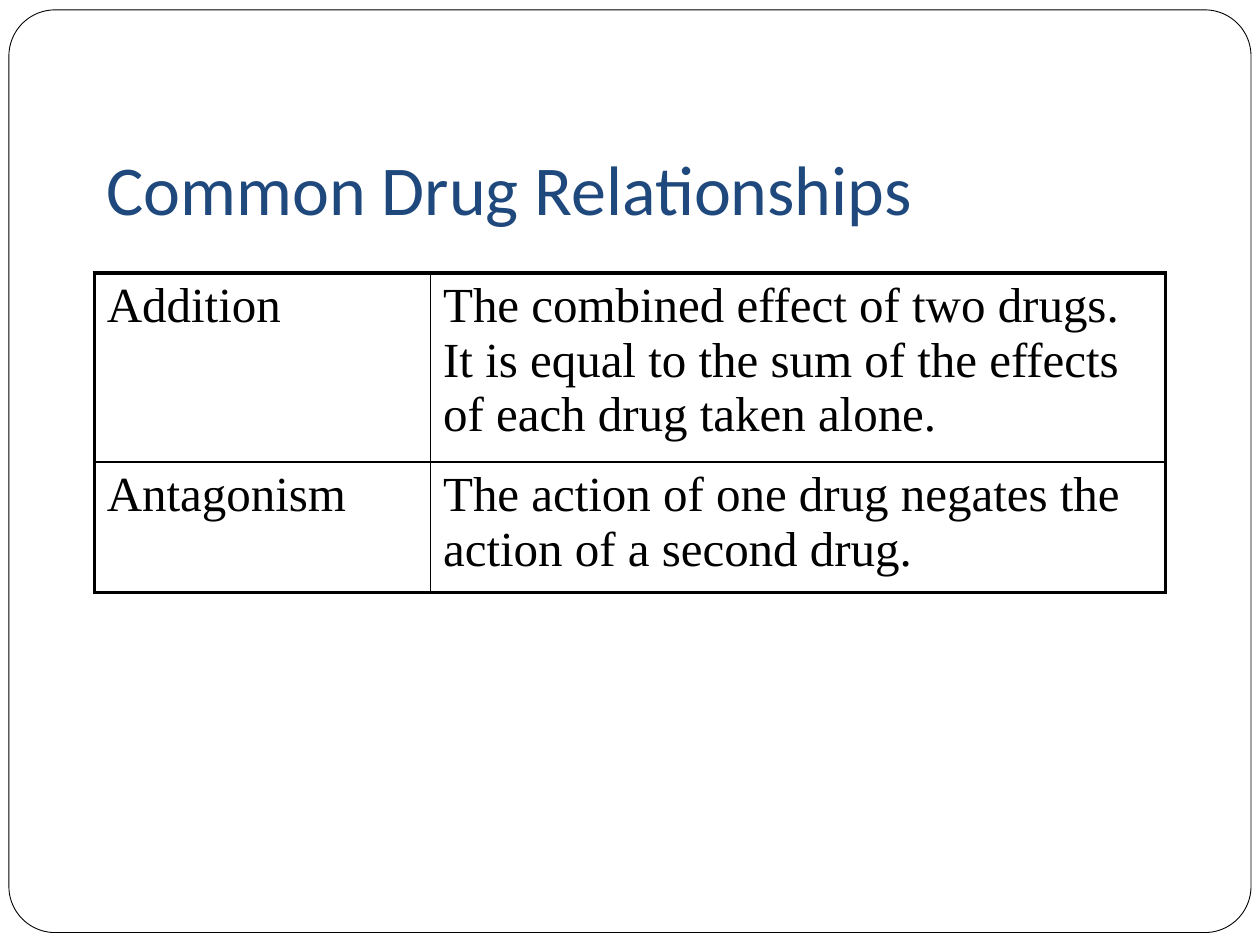
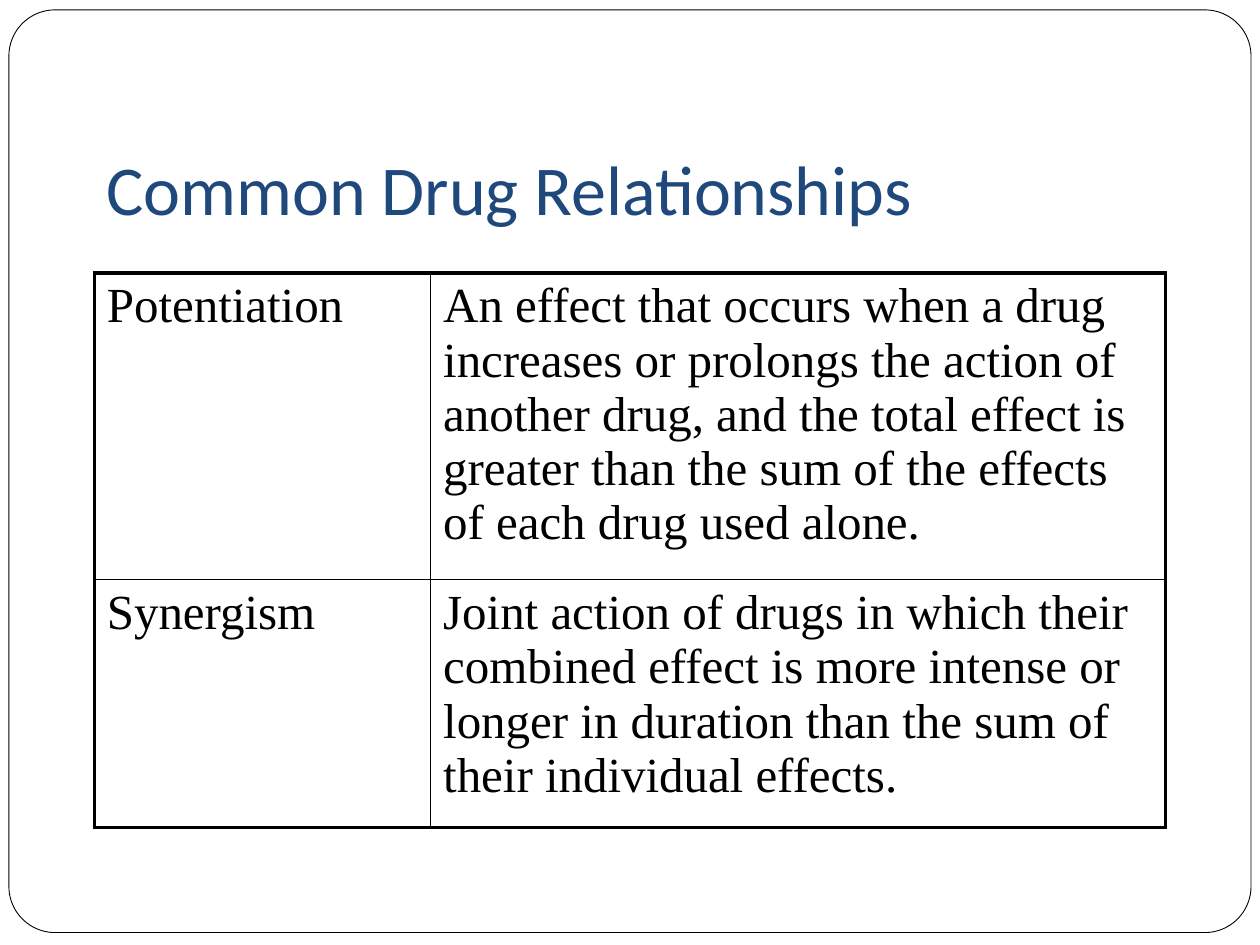
import lxml.etree
import pptx
import pptx.dml.color
import pptx.enum.shapes
import pptx.enum.text
import pptx.oxml.ns
import pptx.util
from pptx.util import Cm

BLACK = pptx.dml.color.RGBColor(0x00, 0x00, 0x00)
WHITE = pptx.dml.color.RGBColor(0xFF, 0xFF, 0xFF)
NAVY = pptx.dml.color.RGBColor(0x1F, 0x49, 0x7D)

TITLE = "Common Drug Relationships"
LEFT, WIDTH = Cm(1.9), Cm(21.6)
THICK, THIN = 2.25, 1

SLIDES = [
    [("Addition",
      "The combined effect of two drugs. It is equal to the sum of the effects "
      "of each drug taken alone."),
     ("Antagonism",
      "The action of one drug negates the action of a second drug.")],
    [("Potentiation",
      "An effect that occurs when a drug increases or prolongs the action of "
      "another drug, and the total effect is greater than the sum of the effects "
      "of each drug used alone."),
     ("Synergism",
      "Joint action of drugs in which their combined effect is more intense or "
      "longer in duration than the sum of their individual effects.")],
]


def style_text(p, font, size, color):
    p.font.name = font
    p.font.size = pptx.util.Pt(size)
    p.font.color.rgb = color


def set_borders(cell, widths):
    """Draw the cell's borders; widths are left, right, top, bottom in points."""
    tcPr = cell._tc.get_or_add_tcPr()
    for i, (side, width) in enumerate(zip("LRTB", widths)):
        ln = lxml.etree.Element(pptx.oxml.ns.qn("a:ln" + side),
                                w=str(pptx.util.Pt(width)))
        fill = lxml.etree.SubElement(ln, pptx.oxml.ns.qn("a:solidFill"))
        lxml.etree.SubElement(fill, pptx.oxml.ns.qn("a:srgbClr"), val=str(BLACK))
        tcPr.insert(i, ln)


prs = pptx.Presentation()
prs.slide_width, prs.slide_height = Cm(25.4), Cm(19.05)

for entries in SLIDES:
    s = prs.slides.add_slide(prs.slide_layouts[6])

    # Rounded frame
    sp = s.shapes.add_shape(pptx.enum.shapes.MSO_SHAPE.ROUNDED_RECTANGLE,
                            Cm(0.18), Cm(0.2), Cm(25.04), Cm(18.6))
    sp.adjustments[0] = 0.05
    sp.shadow.inherit = False
    sp.fill.solid()
    sp.fill.fore_color.rgb = WHITE
    sp.line.color.rgb = BLACK
    sp.line.width = pptx.util.Pt(0.5)

    # Title
    sp = s.shapes.add_textbox(LEFT, Cm(1.7), WIDTH, Cm(3.18))
    tf = sp.text_frame
    tf.word_wrap = True
    tf.vertical_anchor = pptx.enum.text.MSO_ANCHOR.BOTTOM
    tf.margin_bottom = Cm(0.25)
    p = tf.paragraphs[0]
    p.text = TITLE
    style_text(p, "Calibri", 40, NAVY)

    # Term and definition table; rows grow to fit their text
    table = s.shapes.add_table(len(entries), 2, LEFT, Cm(5.5), WIDTH, Cm(4.58)).table
    table.first_row = table.horz_banding = False
    table.columns[0].width = Cm(6.78)
    table.columns[1].width = WIDTH - Cm(6.78)
    last = len(entries) - 1
    for row, entry in enumerate(entries):
        for col, text in enumerate(entry):
            cell = table.cell(row, col)
            cell.fill.background()
            p = cell.text_frame.paragraphs[0]
            p.text = text
            style_text(p, "Times New Roman", 28, BLACK)
            outer = (col == 0, col == 1, row == 0, row == last)
            set_borders(cell, [THICK if edge else THIN for edge in outer])

prs.save("out.pptx")
